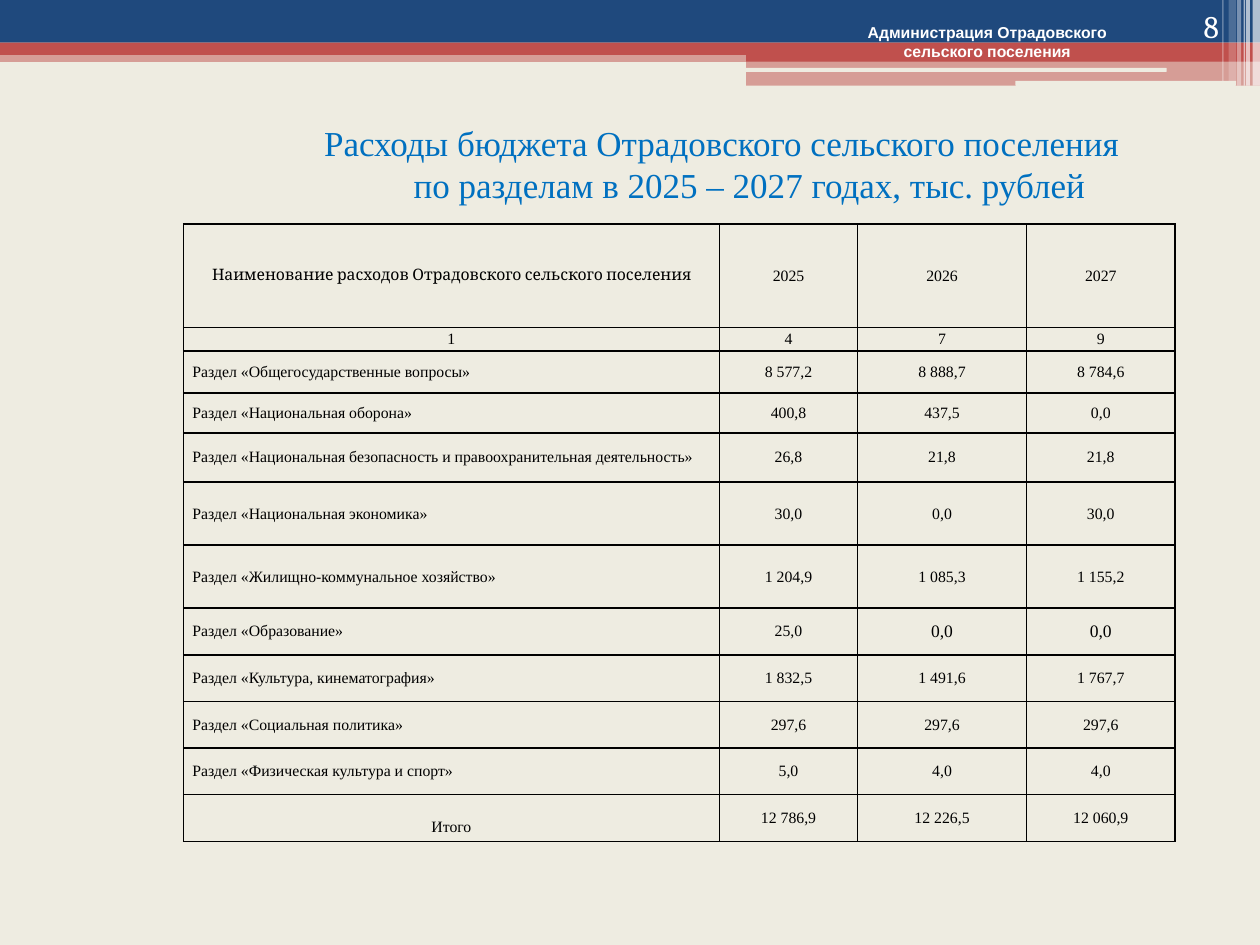
from lxml import etree
from pptx import Presentation
from pptx.dml.color import RGBColor
from pptx.enum.shapes import MSO_SHAPE
from pptx.enum.text import MSO_ANCHOR, PP_ALIGN
from pptx.oxml.ns import qn
from pptx.util import Cm, Pt

RECTANGLE, ROUNDED = MSO_SHAPE.RECTANGLE, MSO_SHAPE.ROUNDED_RECTANGLE
CENTER, LEFT, RIGHT = PP_ALIGN.CENTER, PP_ALIGN.LEFT, PP_ALIGN.RIGHT
MIDDLE, TOP, BOTTOM = MSO_ANCHOR.MIDDLE, MSO_ANCHOR.TOP, MSO_ANCHOR.BOTTOM
COLORS = {"paper": "EEECE1", "navy": "1F497D", "red": "C0504D",
          "white": "FFFFFF", "title": "0070C0", "ink": "000000"}
SERIF = "Times New Roman"

BANDS = [
    (0, 1.02, 25.4, 0.23, "red", 50),
    (0, 0, 25.4, 0.86, "navy", 100),
    (0, 0.86, 25.4, 0.25, "red", 100),
    (15.04, 0.99, 10.36, 0.25, "red", 100),
    (15.04, 1.22, 10.36, 0.51, "red", 50),
]
SLOTS = [(15.01, 1.37, 8.51, 0.08), (20.47, 1.63, 4.45, 0.1)]
STRIPES = [(25.25, 0.15, 1.73, 65), (25.12, 0.08, 1.73, 65), (25.07, 0.03, 1.73, 60),
           (24.94, 0.08, 1.73, 40), (24.77, 0.15, 1.63, 20), (24.64, 0.03, 1.63, 30)]

COLUMN_WIDTHS = [10.8, 2.79, 3.4, 3]
ROW_HEIGHTS = [2.08, 0.48, 0.84, 0.81, 0.99, 1.27, 1.27] + [0.94] * 5
EXPENSES = [
    ("Наименование расходов Отрадовского сельского поселения", "2025", "2026", "2027"),
    ("1", "4", "7", "9"),
    ("Раздел «Общегосударственные вопросы»", "8 577,2", "8 888,7", "8 784,6"),
    ("Раздел «Национальная оборона»", "400,8", "437,5", "0,0"),
    ("Раздел «Национальная безопасность и правоохранительная деятельность»",
     "26,8", "21,8", "21,8"),
    ("Раздел «Национальная экономика»", "30,0", "0,0", "30,0"),
    ("Раздел «Жилищно-коммунальное хозяйство»", "1 204,9", "1 085,3", "1 155,2"),
    ("Раздел «Образование»", "25,0", "0,0", "0,0"),
    ("Раздел «Культура, кинематография»", "1 832,5", "1 491,6", "1 767,7"),
    ("Раздел «Социальная политика»", "297,6", "297,6", "297,6"),
    ("Раздел «Физическая культура и спорт»", "5,0", "4,0", "4,0"),
    ("Итого", "12 786,9", "12 226,5", "12 060,9"),
]
EDUCATION_ROW = 7


def color(name):
    """Return the named colour."""
    return RGBColor.from_string(COLORS[name])


def format_paragraph(paragraph, font_name, size, color_name, alignment, bold=False):
    """Set the font and alignment of one paragraph."""
    font = paragraph.font
    font.name, font.size, font.bold = font_name, Pt(size), bold
    font.color.rgb = color(color_name)
    paragraph.alignment = alignment


def add_block(slide, kind, left, top, width, height, color_name, opacity=100):
    """Add a borderless block, partly transparent below 100 % opacity."""
    shape = slide.shapes.add_shape(kind, Cm(left), Cm(top), Cm(width), Cm(height))
    shape.shadow.inherit = False
    shape.line.fill.background()
    shape.fill.solid()
    shape.fill.fore_color.rgb = color(color_name)
    if opacity < 100:
        fill_color = shape.fill._xPr.find(qn("a:solidFill"))[0]
        etree.SubElement(fill_color, qn("a:alpha"), val=str(opacity * 1000))


def add_label(slide, left, top, width, height, lines, anchor, **style):
    """Add a text box with one paragraph for each line."""
    text_box = slide.shapes.add_textbox(Cm(left), Cm(top), Cm(width), Cm(height))
    frame = text_box.text_frame
    frame.word_wrap = True
    frame.vertical_anchor = anchor
    frame.text = "\n".join(lines)
    for paragraph in frame.paragraphs:
        format_paragraph(paragraph, color_name="white", **style)


def add_header(slide, left, top):
    """Draw the coloured header with the administration name and page number."""
    for x, y, width, height, color_name, opacity in BANDS:
        add_block(slide, RECTANGLE, left + x, top + y, width, height, color_name, opacity)
    for x, y, width, height in SLOTS:
        add_block(slide, ROUNDED, left + x, top + y, width, height, "paper")
    for x, width, height, opacity in STRIPES:
        add_block(slide, RECTANGLE, left + x, top, width, height, "white", opacity)
    add_label(slide, left + 15.95, top + 0.33, 7.9, 1.02,
              ["Администрация Отрадовского", "сельского поселения"], TOP,
              font_name="Arial", size=9, alignment=CENTER, bold=True)
    add_label(slide, left + 22.71, top, 2.11, 1.02, ["8"], BOTTOM,
              font_name="Cambria", size=18, alignment=RIGHT)


def set_title(slide, left, top, width, height):
    """Place the two-line title, each line with its own indent."""
    title = slide.shapes.title
    title.left, title.top, title.width, title.height = map(Cm, (left, top, width, height))
    frame = title.text_frame
    frame.vertical_anchor = MIDDLE
    frame.margin_top = Cm(0.33)
    frame.text = ("Расходы бюджета Отрадовского сельского поселения\n"
                  "по разделам в 2025 – 2027 годах, тыс. рублей")
    for paragraph, indent in zip(frame.paragraphs, (3.6, 4.72)):
        format_paragraph(paragraph, SERIF, 20, "title", CENTER)
        paragraph._p.get_or_add_pPr().set("marL", str(Cm(indent)))


def set_borders(cell):
    """Draw thin dark lines on all four sides of a cell."""
    properties = cell._tc.get_or_add_tcPr()
    for index, side in enumerate(("a:lnL", "a:lnR", "a:lnT", "a:lnB")):
        line = etree.Element(qn(side), w=str(Pt(1)))
        fill = etree.SubElement(line, qn("a:solidFill"))
        etree.SubElement(fill, qn("a:srgbClr"), val=COLORS["ink"])
        properties.insert(index, line)


def add_expense_table(slide, left, top):
    """Add the table of expenses by section and year."""
    shape = slide.shapes.add_table(len(EXPENSES), len(COLUMN_WIDTHS), Cm(left), Cm(top),
                                   Cm(sum(COLUMN_WIDTHS)), Cm(sum(ROW_HEIGHTS)))
    table = shape.table
    table.first_row = table.horz_banding = False
    for column, width in zip(table.columns, COLUMN_WIDTHS):
        column.width = Cm(width)
    for row, height in zip(table.rows, ROW_HEIGHTS):
        row.height = Cm(height)
    last_row = len(EXPENSES) - 1
    for row_index, values in enumerate(EXPENSES):
        for column_index, value in enumerate(values):
            cell = table.cell(row_index, column_index)
            cell.text = value
            cell.fill.background()
            cell.vertical_anchor = MIDDLE
            cell.margin_left = cell.margin_right = Cm(0.18)
            cell.margin_top = cell.margin_bottom = 0
            is_section = column_index == 0 and 1 < row_index < last_row
            font_name = "Cambria" if row_index == column_index == 0 else SERIF
            size = 10 if row_index == EDUCATION_ROW and column_index > 1 else 9
            format_paragraph(cell.text_frame.paragraphs[0], font_name, size, "ink",
                             LEFT if is_section else CENTER)
            set_borders(cell)
    table.cell(last_row, 0).margin_top = Cm(0.36)


def main():
    """Build and save the presentation."""
    presentation = Presentation()
    presentation.slide_width, presentation.slide_height = Cm(25.4), Cm(19.05)
    slide = presentation.slides.add_slide(presentation.slide_layouts[5])
    slide.background.fill.solid()
    slide.background.fill.fore_color.rgb = color("paper")
    add_header(slide, 0, 0)
    set_title(slide, 0.05, 1.93, 25.4, 2.51)
    add_expense_table(slide, 3.7, 4.52)
    presentation.save("out.pptx")


if __name__ == "__main__":
    main()
